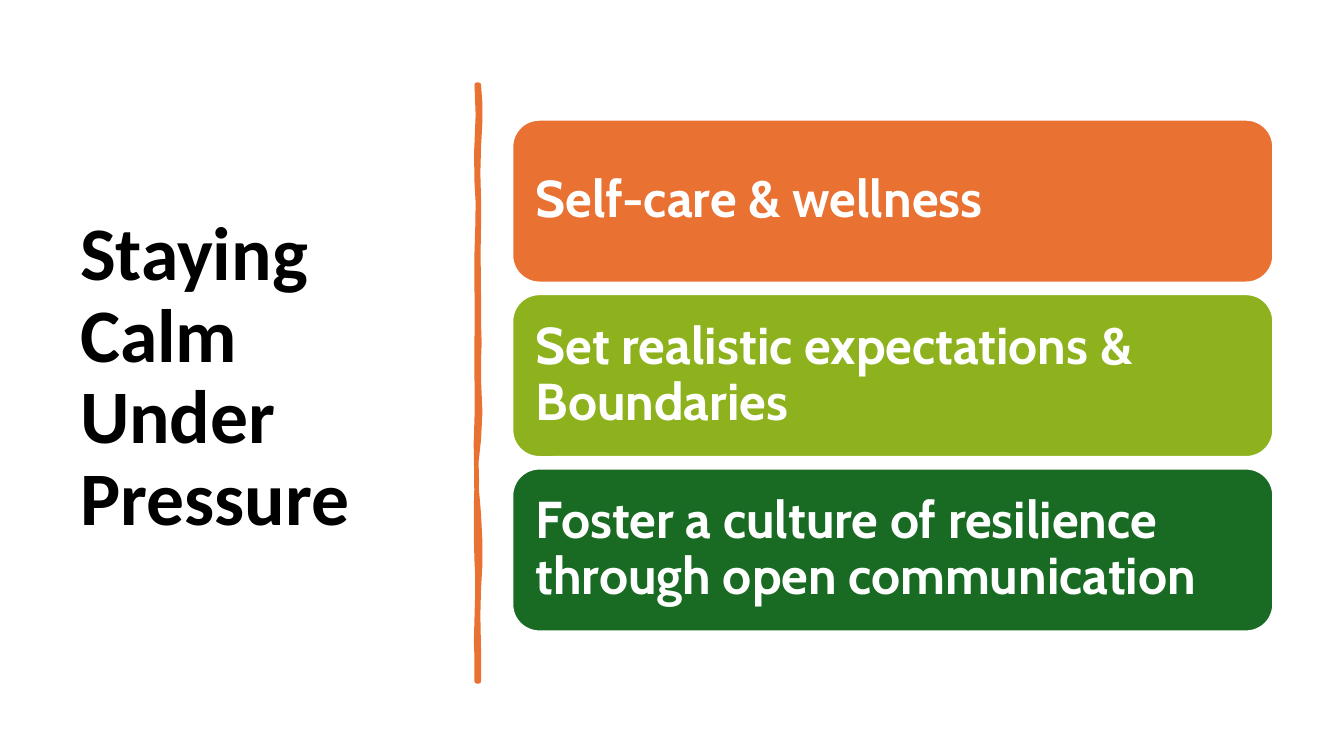
from dataclasses import dataclass

from pptx import Presentation
from pptx.dml.color import RGBColor
from pptx.enum.shapes import MSO_SHAPE as Preset
from pptx.enum.text import MSO_ANCHOR as Anchor, MSO_AUTO_SIZE as AutoSize, PP_ALIGN as Align
from pptx.slide import Slide
from pptx.text.text import TextFrame
from pptx.util import Pt


@dataclass(frozen=True)
class Theme:
    orange: str = "E97132"
    lime: str = "8EB21E"
    green: str = "196B24"
    black: str = "000000"
    white: str = "FFFFFF"
    title_font: str = "Calibri"
    card_font: str = "Cabin"
    title_size: float = 54
    card_size: float = 37


@dataclass(frozen=True)
class Card:
    text: str
    color: str


@dataclass(frozen=True)
class Wave:
    """A cubic curve down one edge: two sideways bends, then back on the edge."""
    bend_1: float
    y_1: float
    bend_2: float
    y_2: float
    end_y: float


THEME = Theme()
CARDS = [
    Card("Self-care & wellness", THEME.orange),
    Card("Set realistic expectations & Boundaries", THEME.lime),
    Card("Foster a culture of resilience through open communication", THEME.green),
]
CARD_LEFT, CARD_TOP, CARD_WIDTH, CARD_HEIGHT = 365.9, 85.5, 543.6, 116.4
CARD_PITCH = 124.6
CARD_INSET = 11.1

DIVIDER_TOP, DIVIDER_BOTTOM = 60.5, 486.7
RIGHT_EDGE, LEFT_EDGE = 342, 340.6
RIGHT_WAVES = [
    Wave(1.4, 73.4, 1.4, 85.7, 105.1),
    Wave(-1.4, 124.6, 0.7, 140.4, 162.7),
    Wave(-0.7, 185, 0, 188.6, 211.7),
    Wave(-0.7, 234, 1.4, 246.2, 256.3),
    Wave(-1.4, 266.4, 2.9, 298.1, 313.9),
    Wave(-2.9, 329, -2.2, 348.5, 367.2),
    Wave(1.4, 385.9, 1.4, 406.1, 420.5),
    Wave(-1.4, 434.2, 0.7, 468, DIVIDER_BOTTOM),
]
LEFT_WAVES = [
    Wave(0.7, 465.1, -1.4, 463.7, 441.4),
    Wave(0.7, 419.8, 0.7, 410.4, 401),
    Wave(-0.7, 391.7, -0.7, 356.4, 343.4),
    Wave(0, 330.5, -1.4, 320.4, 298.8),
    Wave(0.7, 277.9, -0.7, 268.6, 241.2),
    Wave(0.7, 214.6, -0.7, 202.3, 180),
    Wave(0.7, 157, 1.4, 144, 130.3),
    Wave(-2.2, 117.4, 2.9, 74.9, DIVIDER_TOP),
]


def write_text(frame: TextFrame, text: str, *, font: str, size: float,
               color: str, inset_x: float, inset_y: float) -> None:
    frame.word_wrap = True
    frame.auto_size = AutoSize.NONE
    frame.vertical_anchor = Anchor.MIDDLE
    frame.margin_left = frame.margin_right = Pt(inset_x)
    frame.margin_top = frame.margin_bottom = Pt(inset_y)
    paragraph = frame.paragraphs[0]
    paragraph.alignment = Align.LEFT
    paragraph.line_spacing = 0.9
    run = paragraph.add_run()
    run.text = text
    run.font.name = font
    run.font.size = Pt(size)
    run.font.bold = True
    run.font.color.rgb = RGBColor.from_string(color)


def paint(shape, fill: str, line: str, line_width: float) -> None:
    shape.shadow.inherit = False
    shape.fill.solid()
    shape.fill.fore_color.rgb = RGBColor.from_string(fill)
    shape.line.color.rgb = RGBColor.from_string(line)
    shape.line.width = Pt(line_width)


def trace_edge(edge: float, start_y: float, waves: list[Wave],
               steps: int = 3) -> list[tuple[int, int]]:
    """Sample the curves of one edge as points along it."""
    points = []
    for wave in waves:
        for step in range(1, steps + 1):
            t = step / steps
            near, far = 3 * t * (1 - t) ** 2, 3 * t ** 2 * (1 - t)
            x = edge + near * wave.bend_1 + far * wave.bend_2
            y = ((1 - t) ** 3 * start_y + near * wave.y_1
                 + far * wave.y_2 + t ** 3 * wave.end_y)
            points.append((Pt(x), Pt(y)))
        start_y = wave.end_y
    return points


def add_title(slide: Slide) -> None:
    title = slide.shapes.title
    title.left, title.top = Pt(50), Pt(50.4)
    title.width, title.height = Pt(269.3), Pt(439.9)
    write_text(title.text_frame, "Staying Calm Under Pressure", font=THEME.title_font,
               size=THEME.title_size, color=THEME.black, inset_x=7.2, inset_y=3.6)


def add_divider(slide: Slide) -> None:
    builder = slide.shapes.build_freeform(Pt(RIGHT_EDGE), Pt(DIVIDER_TOP))
    builder.add_line_segments(
        trace_edge(RIGHT_EDGE, DIVIDER_TOP, RIGHT_WAVES), close=False)
    builder.add_line_segments(
        [(Pt(LEFT_EDGE), Pt(DIVIDER_BOTTOM))]
        + trace_edge(LEFT_EDGE, DIVIDER_BOTTOM, LEFT_WAVES), close=True)
    paint(builder.convert_to_shape(), THEME.orange, THEME.orange, 3.25)


def add_card(slide: Slide, card: Card, top: float) -> None:
    shape = slide.shapes.add_shape(Preset.ROUNDED_RECTANGLE, Pt(CARD_LEFT), Pt(top),
                                   Pt(CARD_WIDTH), Pt(CARD_HEIGHT))
    paint(shape, card.color, THEME.white, 1.5)
    write_text(shape.text_frame, card.text, font=THEME.card_font, size=THEME.card_size,
               color=THEME.white, inset_x=CARD_INSET, inset_y=CARD_INSET)


def main() -> None:
    presentation = Presentation()
    presentation.slide_width, presentation.slide_height = Pt(960), Pt(540)
    slide = presentation.slides.add_slide(presentation.slide_layouts[5])
    add_title(slide)
    add_divider(slide)
    for index, card in enumerate(CARDS):
        add_card(slide, card, CARD_TOP + index * CARD_PITCH)
    presentation.save("out.pptx")


if __name__ == "__main__":
    main()
